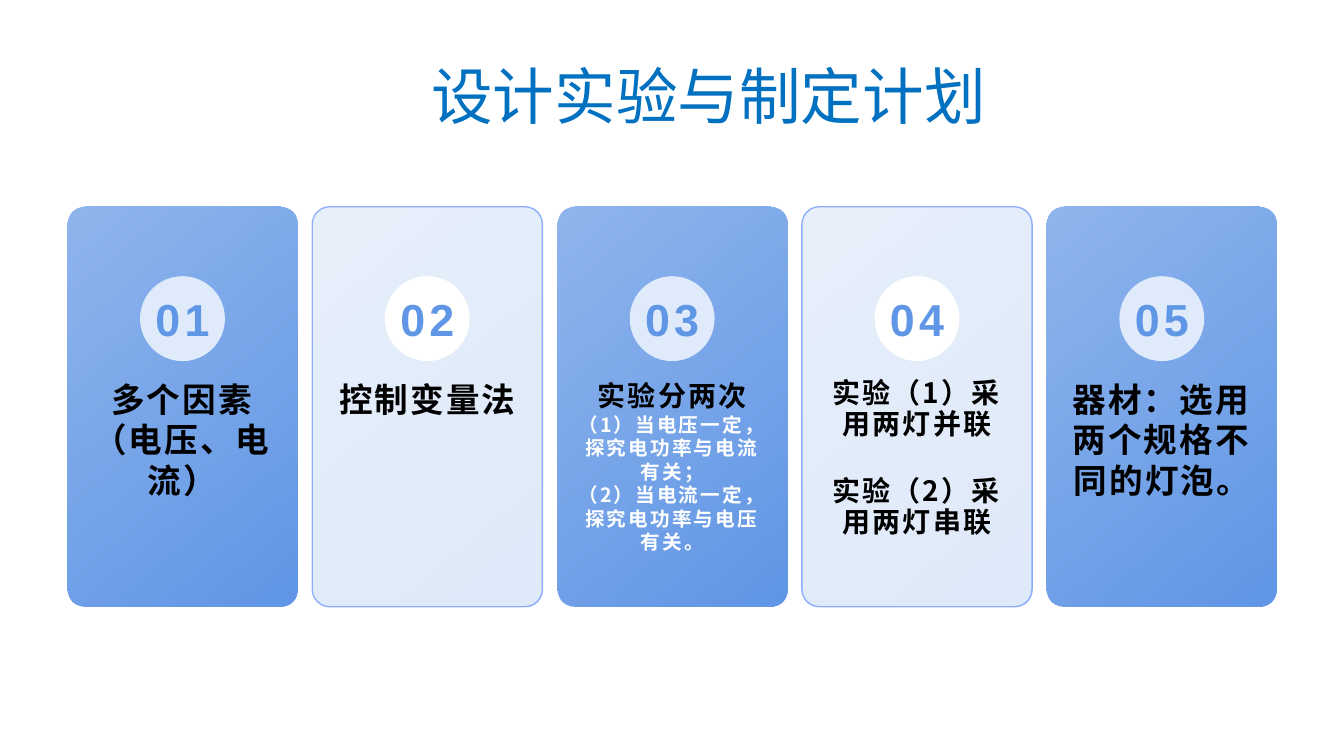
from dataclasses import dataclass

from lxml.etree import SubElement
from pptx import Presentation
from pptx.dml.color import RGBColor
from pptx.enum.shapes import MSO_SHAPE as Shape
from pptx.enum.text import MSO_ANCHOR as Anchor, PP_ALIGN as Align
from pptx.oxml.ns import qn
from pptx.util import Cm, Pt


@dataclass(frozen=True)
class Theme:
    title: str = "0070C0"
    blue: str = "6096E6"
    pale: str = "DFEAFA"
    white: str = "FFFFFF"
    black: str = "000000"
    border: str = "376FFF"
    body_font: str = "Noto Sans CJK SC"
    number_font: str = "Arial"
    title_size: int = 44
    number_size: int = 32
    large: int = 24
    medium: int = 20
    small: int = 14


THEME = Theme()
TITLE = "设计实验与制定计划"
STEPS = [
    [("多个因素（电压、电流）", THEME.large, THEME.black)],
    [("控制变量法", THEME.large, THEME.black)],
    [
        ("实验分两次", THEME.medium, THEME.black),
        ("（1）当电压一定，探究电功率与电流有关；", THEME.small, THEME.white),
        ("（2）当电流一定，探究电功率与电压有关。", THEME.small, THEME.white),
    ],
    [
        ("实验（1）采用两灯并联", THEME.medium, THEME.black),
        ("实验（2）采用两灯串联", THEME.medium, THEME.black),
    ],
    [("器材：选用两个规格不同的灯泡。", THEME.large, THEME.black)],
]
LINE_SPACING = [1.0, 1.0, 1.0, 0.91, 1.0]
PARAGRAPH_GAP = [0, 0, 0, 26.4, 0]

CARD_LEFT, CARD_TOP, CARD_PITCH = 1.7, 5.21, 6.17
CARD_WIDTH, CARD_HEIGHT = 5.8, 10.08
BADGE_TOP, BADGE_SIZE = 6.96, 2.14
NUMBER_WIDTH, NUMBER_HEIGHT = 2.0, 1.5
BODY_TOP, BODY_WIDTH, BODY_HEIGHT = 9.55, 4.75, 4.65


def rgb(color):
    return RGBColor.from_string(color)


def set_alpha(parent, percent):
    color = next(parent.iter(qn("a:srgbClr")))
    SubElement(color, qn("a:alpha")).set("val", str(percent * 1000))


def add_run(paragraph, text, size, color, font, bold=True, spacing=0):
    run = paragraph.add_run()
    run.text = text
    run.font.size = Pt(size)
    run.font.bold = bold
    run.font.name = font
    run.font.color.rgb = rgb(color)
    properties = run.font._element
    properties.set("spc", str(int(spacing * 100)))
    SubElement(properties, qn("a:ea")).set("typeface", font)


def clear_margins(frame):
    frame.word_wrap = True
    frame.margin_left = frame.margin_right = 0
    frame.margin_top = frame.margin_bottom = 0


def add_frame(slide, left, top, width, height):
    frame = slide.shapes.add_textbox(Cm(left), Cm(top), Cm(width), Cm(height)).text_frame
    clear_margins(frame)
    return frame


def add_card(slide, left, color, start_alpha, bordered):
    card = slide.shapes.add_shape(
        Shape.ROUNDED_RECTANGLE, Cm(left), Cm(CARD_TOP), Cm(CARD_WIDTH), Cm(CARD_HEIGHT))
    card.shadow.inherit = False
    card.adjustments[0] = 0.076
    card.fill.gradient()
    card.fill.gradient_angle = 310
    for stop, position in zip(card.fill.gradient_stops, (0, 1)):
        stop.position = position
        stop.color.rgb = rgb(color)
    set_alpha(next(card._element.iter(qn("a:gs"))), start_alpha)
    if bordered:
        card.line.width = Pt(1)
        card.line.color.rgb = rgb(THEME.border)
        set_alpha(next(card._element.iter(qn("a:ln"))), 50)
    else:
        card.line.fill.background()


def add_badge(slide, center, number, color):
    badge = slide.shapes.add_shape(
        Shape.OVAL, Cm(center - BADGE_SIZE / 2), Cm(BADGE_TOP), Cm(BADGE_SIZE), Cm(BADGE_SIZE))
    badge.shadow.inherit = False
    badge.fill.solid()
    badge.fill.fore_color.rgb = rgb(color)
    badge.line.fill.background()
    label = add_frame(
        slide, center - NUMBER_WIDTH / 2, BADGE_TOP + (BADGE_SIZE - NUMBER_HEIGHT) / 2,
        NUMBER_WIDTH, NUMBER_HEIGHT)
    label.vertical_anchor = Anchor.MIDDLE
    paragraph = label.paragraphs[0]
    paragraph.alignment = Align.CENTER
    add_run(paragraph, f"{number:02d}", THEME.number_size, THEME.blue,
            THEME.number_font, spacing=3)


def add_body(slide, center, lines, line_spacing, gap):
    body = add_frame(slide, center - BODY_WIDTH / 2, BODY_TOP, BODY_WIDTH, BODY_HEIGHT)
    for index, (text, size, color) in enumerate(lines):
        paragraph = body.add_paragraph() if index else body.paragraphs[0]
        paragraph.alignment = Align.CENTER
        paragraph.line_spacing = line_spacing
        if index and gap:
            paragraph.space_before = Pt(gap)
        add_run(paragraph, text, size, color, THEME.body_font, spacing=1.5)


def add_title(slide):
    title = slide.shapes.title
    title.left, title.top, title.width, title.height = Cm(10.87), Cm(1.32), Cm(16.69), Cm(2.13)
    clear_margins(title.text_frame)
    title.text_frame.vertical_anchor = Anchor.MIDDLE
    paragraph = title.text_frame.paragraphs[0]
    paragraph.alignment = Align.LEFT
    add_run(paragraph, TITLE, THEME.title_size, THEME.title, THEME.body_font, bold=False)


def main():
    deck = Presentation()
    deck.slide_width, deck.slide_height = Cm(33.87), Cm(19.05)
    slide = deck.slides.add_slide(deck.slide_layouts[5])
    add_title(slide)
    for index, (lines, line_spacing, gap) in enumerate(zip(STEPS, LINE_SPACING, PARAGRAPH_GAP)):
        left = CARD_LEFT + index * CARD_PITCH
        center = left + CARD_WIDTH / 2
        light = index % 2 == 1
        add_card(slide, left, THEME.pale if light else THEME.blue, 72 if light else 70, light)
        add_badge(slide, center, index + 1, THEME.white if light else THEME.pale)
        add_body(slide, center, lines, line_spacing, gap)
    deck.save("out.pptx")


if __name__ == "__main__":
    main()
